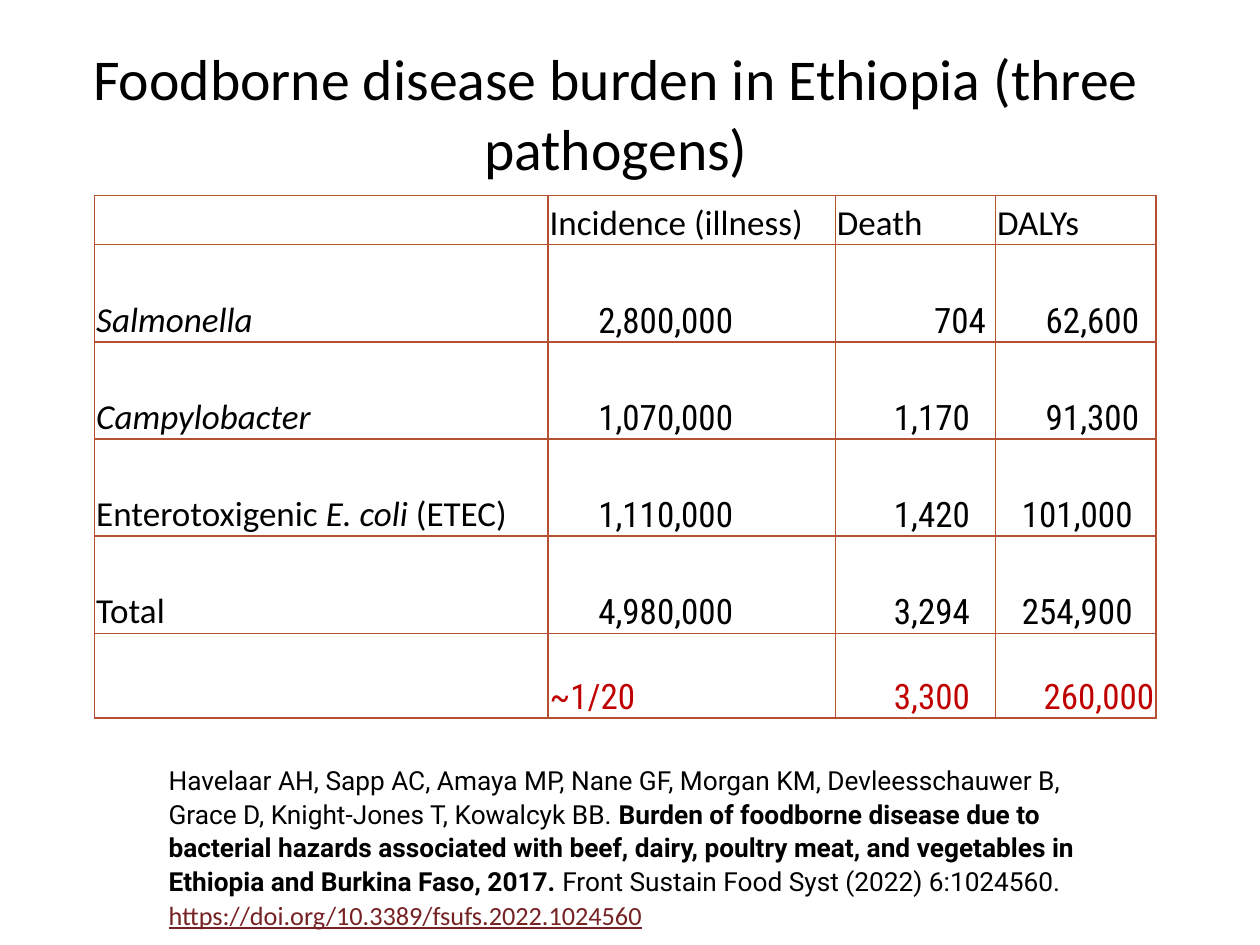
import dataclasses

import lxml.etree
import pptx
import pptx.dml.color
import pptx.enum.text
import pptx.oxml.ns
import pptx.util

Cm = pptx.util.Cm
Pt = pptx.util.Pt
text = pptx.enum.text
qn = pptx.oxml.ns.qn


@dataclasses.dataclass(frozen=True)
class Theme:
    ink: str = "000000"
    accent: str = "C00000"
    rule: str = "B65033"
    link: str = "762123"
    body: str = "Calibri"
    digits: str = "Roboto Condensed"
    cite: str = "Roboto"
    title_size: float = 33
    table_size: float = 20
    cite_size: float = 15


THEME = Theme()
COLS = (9.14, 5.79, 3.23, 3.23)
ROWS = (0.99, 1.96, 1.96, 1.96, 1.96, 1.7)
HEADS = ("", "Incidence (illness)", "Death", "DALYs")

# A name is a list of (text, italic) runs.
NAMES = (
    [("Salmonella", True)],
    [("Campylobacter", True)],
    [("Enterotoxigenic ", False), ("E. coli", True), (" (ETEC)", False)],
    [("Total", False)],
    [],
)
# A figure is (text, left indent in cm); None sets it flush right.
FIGURES = (
    (("2,800,000", 0.98), ("704", 1.96), ("62,600", 0.98)),
    (("1,070,000", 0.98), ("1,170", 1.15), ("91,300", 0.98)),
    (("1,110,000", 0.98), ("1,420", 1.15), ("101,000", 0.5)),
    (("4,980,000", 0.98), ("3,294", 1.15), ("254,900", 0.5)),
    (("~1/20", 0), ("3,300", 1.15), ("260,000", None)),
)
CITE = (
    ("Havelaar AH, Sapp AC, Amaya MP, Nane GF, Morgan KM, Devleesschauwer B, "
     "Grace D, Knight-Jones T, Kowalcyk BB. ", False),
    ("Burden of foodborne disease due to bacterial hazards associated with "
     "beef, dairy, poultry meat, and vegetables in Ethiopia and Burkina Faso, "
     "2017.", True),
    (" Front Sustain Food Syst (2022) 6:1024560. ", False),
)
DOI = "https://doi.org/10.3389/fsufs.2022.1024560"


def paint(font, face, size, color=THEME.ink):
    font.name = face
    font.size = Pt(size)
    font.color.rgb = pptx.dml.color.RGBColor.from_string(color)


def frame_cell(cell):
    """Give a cell tight insets, four ruled edges and no fill."""
    cell.margin_left = cell.margin_right = cell.margin_top = Cm(0.03)
    cell.margin_bottom = 0
    cell.vertical_anchor = text.MSO_ANCHOR.BOTTOM
    props = cell._tc.get_or_add_tcPr()
    for side in "LRTB":
        line = lxml.etree.SubElement(props, qn(f"a:ln{side}"), w=str(Pt(1)))
        fill = lxml.etree.SubElement(line, qn("a:solidFill"))
        lxml.etree.SubElement(fill, qn("a:srgbClr"), val=THEME.rule)
    cell.fill.background()


def add_title(slide, box):
    title = slide.shapes.title
    title.left, title.top, title.width, title.height = map(Cm, box)
    frame = title.text_frame
    frame.text = "Foodborne disease burden in Ethiopia (three pathogens)"
    frame.word_wrap = True
    frame.auto_size = text.MSO_AUTO_SIZE.NONE
    frame.vertical_anchor = text.MSO_ANCHOR.TOP
    para = frame.paragraphs[0]
    para.alignment = text.PP_ALIGN.CENTER
    paint(para.font, THEME.body, THEME.title_size)


def fill_name(cell, runs):
    para = cell.text_frame.paragraphs[0]
    paint(para.font, THEME.body, THEME.table_size)
    for words, slant in runs:
        run = para.add_run()
        run.text = words
        run.font.italic = slant


def fill_figure(cell, value, indent, color):
    para = cell.text_frame.paragraphs[0]
    para.text = value
    paint(para.font, THEME.digits, THEME.table_size, color)
    if indent is None:
        para.alignment = text.PP_ALIGN.RIGHT
    elif indent:
        para._p.get_or_add_pPr().set("marL", str(Cm(indent)))


def add_burden(slide, left, top):
    """Place the table of cases, deaths and DALYs by pathogen."""
    size = Cm(sum(COLS)), Cm(sum(ROWS))
    table = slide.shapes.add_table(
        len(ROWS), len(COLS), Cm(left), Cm(top), *size).table
    table.first_row = table.horz_banding = False
    for col, width in zip(table.columns, COLS):
        col.width = Cm(width)
    for row, height in zip(table.rows, ROWS):
        row.height = Cm(height)
    for cell in table.iter_cells():
        frame_cell(cell)
    for col, head in enumerate(HEADS):
        fill_name(table.cell(0, col), [(head, False)] if head else [])
    for row, (name, figures) in enumerate(zip(NAMES, FIGURES), 1):
        fill_name(table.cell(row, 0), name)
        color = THEME.ink if name else THEME.accent
        for col, (value, indent) in enumerate(figures, 1):
            fill_figure(table.cell(row, col), value, indent, color)


def add_cite(slide, box):
    frame = slide.shapes.add_textbox(*map(Cm, box)).text_frame
    frame.word_wrap = True
    para = frame.paragraphs[0]
    para.line_spacing = 1.07
    para.space_after = Pt(8)
    for words, bold in CITE:
        run = para.add_run()
        run.text = words
        paint(run.font, THEME.cite, THEME.cite_size)
        run.font.bold = bold
    run = para.add_run()
    run.text = DOI
    paint(run.font, THEME.body, THEME.cite_size, THEME.link)
    run.font.underline = True


def main():
    deck = pptx.Presentation()
    deck.slide_width, deck.slide_height = Cm(25.4), Cm(19.05)
    slide = deck.slides.add_slide(deck.slide_layouts[5])
    add_title(slide, (1.47, 0.74, 21.89, 1.98))
    add_burden(slide, 1.91, 3.94)
    add_cite(slide, (3.15, 15.24, 19.23, 3.7))
    deck.save("out.pptx")


if __name__ == "__main__":
    main()
